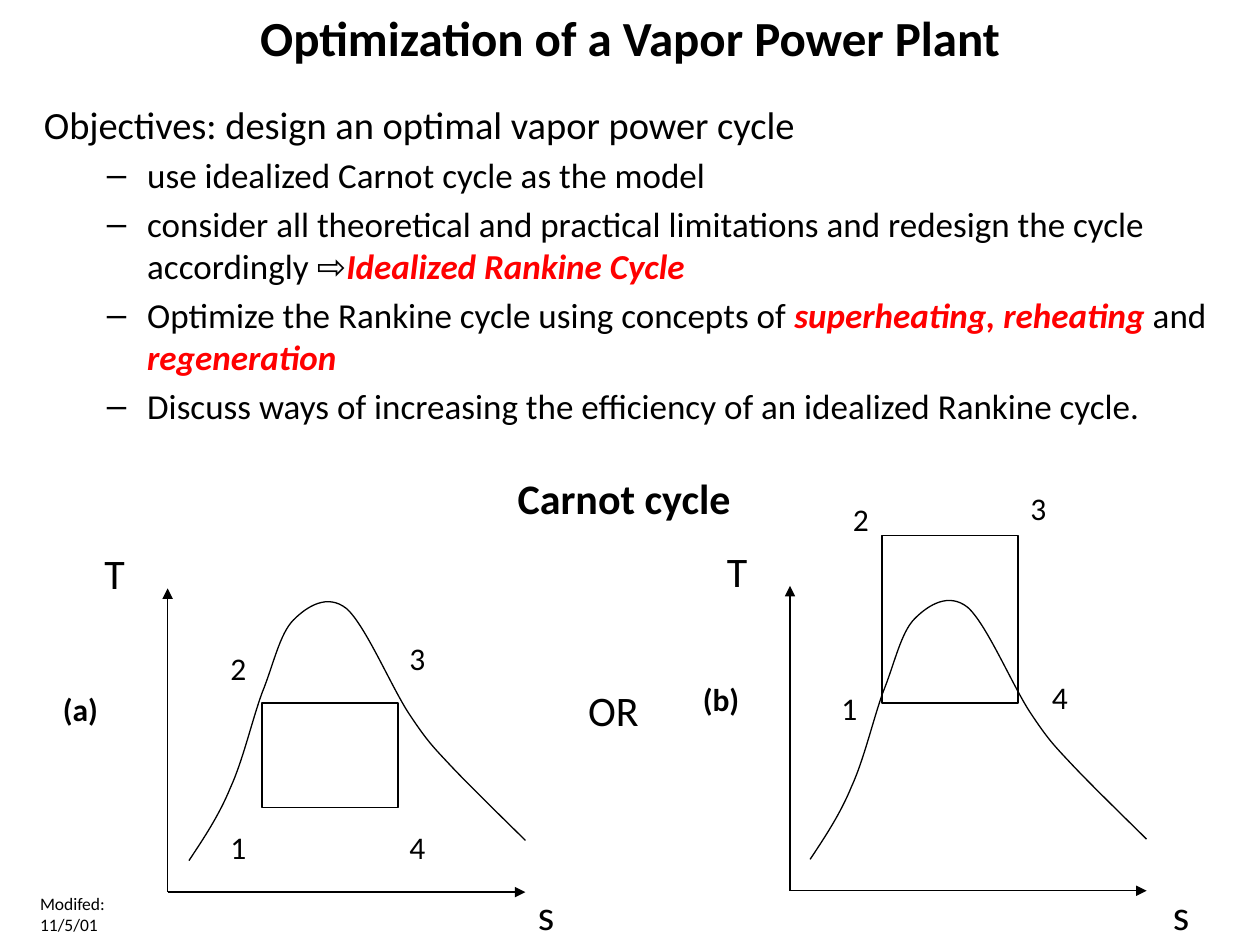
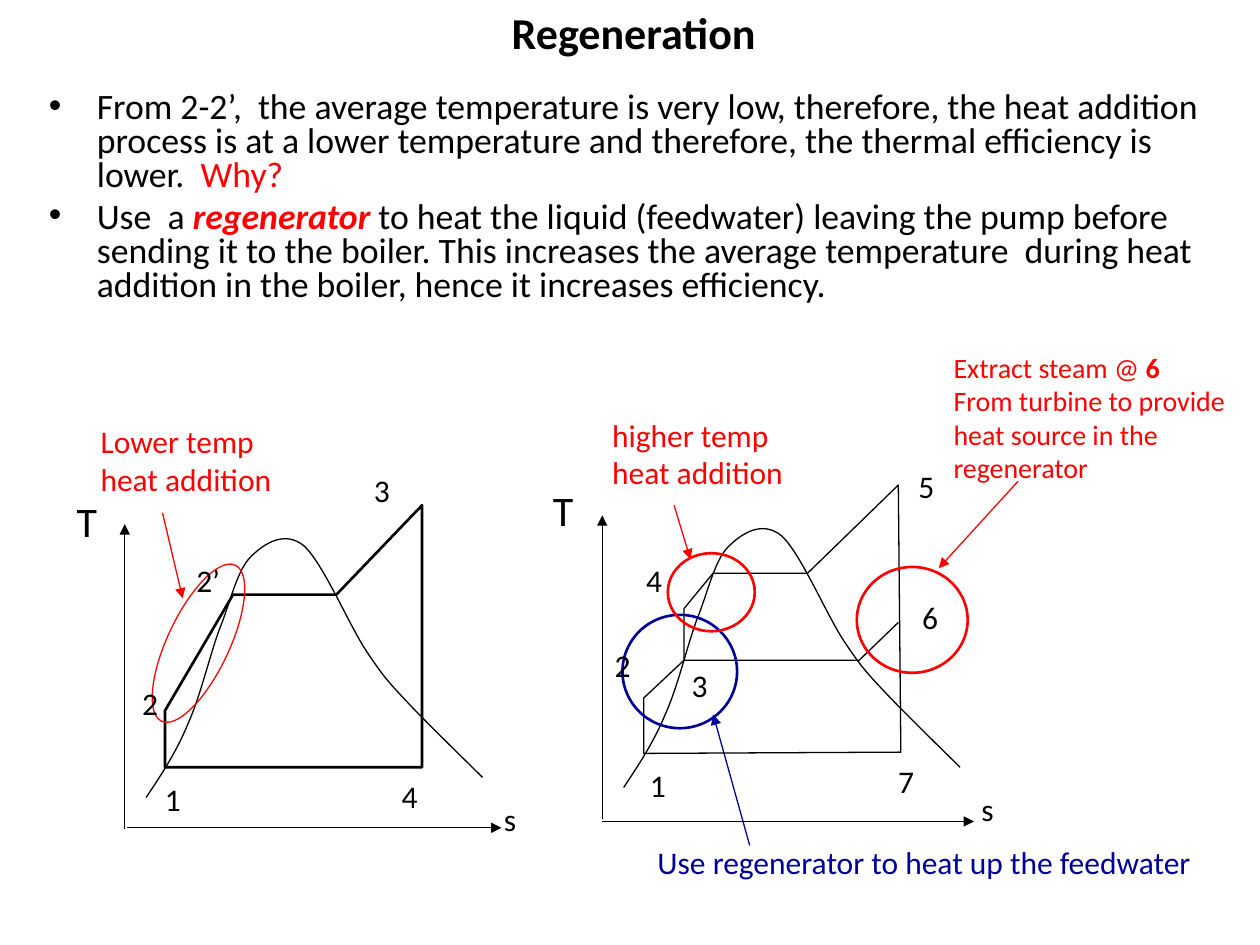
from lxml import etree
from pptx import Presentation
from pptx.dml.color import RGBColor
from pptx.enum.shapes import MSO_CONNECTOR, MSO_SHAPE
from pptx.enum.text import MSO_ANCHOR, MSO_AUTO_SIZE, PP_ALIGN
from pptx.oxml.ns import qn
from pptx.util import Inches, Pt

STRAIGHT = MSO_CONNECTOR.STRAIGHT
RECTANGLE, OVAL = MSO_SHAPE.RECTANGLE, MSO_SHAPE.OVAL
FONT = "Calibri"
BLACK, RED, BLUE = "000000", "FF0000", "000099"
THIN, THICK = 0.75, 1.5
TITLE_ONLY = 5
LINE_HEIGHT = {18: 0.33, 24: 0.4}

# Vapor dome: Bezier control points relative to its lower left end.
DOME = [
    (0, 0), (0.12, -0.18), (0.24, -0.36), (0.33, -0.58),
    (0.43, -0.8), (0.5, -1.11), (0.58, -1.33),
    (0.67, -1.55), (0.72, -1.8), (0.83, -1.91),
    (0.94, -2.02), (1.1, -2.12), (1.25, -2),
    (1.4, -1.87), (1.61, -1.37), (1.75, -1.16),
    (1.89, -0.95), (1.93, -0.91), (2.08, -0.75),
    (2.24, -0.58), (2.57, -0.26), (2.67, -0.16),
]


def add_runs(paragraph, runs, size):
    """Add (text, colour, style) runs; style may hold b for bold and i for italic."""
    for text, color, style in runs:
        run = paragraph.add_run()
        run.text = text
        run.font.name = FONT
        run.font.size = Pt(size)
        run.font.bold = "b" in style
        run.font.italic = "i" in style
        run.font.color.rgb = RGBColor.from_string(color)


def draw_line(shape, color, width):
    """Give a shape or connector a plain line without a shadow."""
    shape.line.color.rgb = RGBColor.from_string(color)
    shape.line.width = Pt(width)
    etree.SubElement(shape._element.spPr, qn("a:effectLst"))


# Body paragraphs: left margin, hanging indent, bullet, size, runs.
carnot = {
    "title": ("Optimization of a Vapor Power Plant", 0.75, 0.58, 28),
    "body_box": (0.25, 0.75, 9.5, 2.83),
    "line_spacing": 1.0,
    "body": [
        (0.38, 0.38, None, 22, [("Objectives: design an optimal vapor power cycle", BLACK, "")]),
        (0.82, 0.32, "–", 20, [("use idealized Carnot cycle as the model", BLACK, "")]),
        (0.82, 0.32, "–", 20, [
            ("consider all theoretical and practical limitations and redesign "
             "the cycle accordingly ⇨", BLACK, ""),
            ("Idealized Rankine Cycle", RED, "bi")]),
        (0.82, 0.32, "–", 20, [
            ("Optimize the Rankine cycle using concepts of ", BLACK, ""),
            ("superheating, reheating", RED, "bi"),
            (" and ", BLACK, ""),
            ("regeneration", RED, "bi")]),
        (0.82, 0.32, "–", 20, [
            ("Discuss ways of increasing the efficiency of an idealized Rankine cycle.",
             BLACK, "")]),
    ],
    # Labels: left, top, width, size, colour, style, lines.
    "labels": [
        (4.01, 3.7, 2.01, 24, BLACK, "b", ["Carnot cycle"]),
        (4.57, 5.38, 0.66, 24, BLACK, "", ["OR"]),
        (0.4, 5.43, 0.52, 18, BLACK, "b", ["(a)"]),
        (5.48, 5.35, 0.54, 18, BLACK, "b", ["(b)"]),
        (0.73, 4.3, 0.4, 24, BLACK, "", ["T"]),
        (5.67, 4.28, 0.4, 24, BLACK, "", ["T"]),
        (4.17, 7, 0.33, 24, BLACK, "", ["s"]),
        (9.21, 7, 0.33, 24, BLACK, "", ["s"]),
    ],
    "states": [
        ("1", 1.73, 6.52), ("2", 1.73, 5.1), ("3", 3.15, 5.02), ("4", 3.15, 6.52),
        ("1", 6.58, 5.42), ("2", 6.67, 3.92), ("3", 8.08, 3.83), ("4", 8.25, 5.33),
    ],
    "note_box": (0.22, 7.04, 0.8, 0.27),
    "note_size": 10,
    "note": [[("Modifed: 11/5/01", BLACK, "")]],
    "arrows": [
        (1.33, 7.08, 1.33, 4.67, BLACK), (1.33, 7.08, 4.17, 7.08, BLACK),
        (6.27, 7.07, 6.27, 4.65, BLACK), (6.27, 7.07, 9.1, 7.07, BLACK),
    ],
    "domes": [(1.5, 6.83), (6.43, 6.82)],
    "cycles": [],
    # Frames: kind, left, top, width, height, rotation, colour, line width.
    "frames": [
        (RECTANGLE, 2.08, 5.58, 1.08, 0.83, 0, BLACK, THIN),
        (RECTANGLE, 7, 4.25, 1.08, 1.33, 0, BLACK, THIN),
    ],
}

regeneration = {
    "title": ("Regeneration", 0.78, 0.51, 25.2),
    "body_box": (0.29, 0.68, 9.52, 1.88),
    "line_spacing": 0.8,
    "body": [
        (0.38, 0.38, "•", 20.4, [
            ("From 2-2’,  the average temperature is very low, therefore, the heat "
             "addition process is at a lower temperature and therefore, the thermal "
             "efficiency is lower.  ", BLACK, ""),
            ("Why?", RED, "")]),
        (0.38, 0.38, "•", 20.4, [
            ("Use  a ", BLACK, ""),
            ("regenerator", RED, "bi"),
            (" to heat the liquid (feedwater) leaving the pump before sending it to "
             "the boiler. This increases the average temperature  during heat addition "
             "in the boiler, hence it increases efficiency.", BLACK, "")]),
    ],
    "labels": [
        (0.51, 3.88, 0.4, 24, BLACK, "", ["T"]),
        (4.29, 3.8, 0.4, 24, BLACK, "", ["T"]),
        (3.9, 6.3, 0.31, 18, BLACK, "", ["s"]),
        (7.69, 6.22, 0.31, 18, BLACK, "", ["s"]),
        (0.7, 3.3, 1.64, 18, RED, "", ["Lower temp", "heat addition"]),
        (4.76, 3.25, 1.64, 18, RED, "", ["higher temp", "heat addition"]),
        (5.12, 6.64, 4.7, 18, BLUE, "", ["Use regenerator to heat up the feedwater"]),
    ],
    "states": [
        ("1", 1.21, 6.14), ("2", 1.03, 5.38), ("2’", 1.46, 4.4), ("3", 2.87, 3.69),
        ("4", 3.09, 6.12),
        ("1", 5.06, 6.03), ("2", 4.78, 5.08), ("3", 5.39, 5.24), ("4", 5.03, 4.4),
        ("5", 7.19, 3.66), ("6", 7.22, 4.7), ("7", 7.03, 6),
    ],
    "note_box": (7.47, 2.73, 2.53, 1.17),
    "note_size": 16,
    "note": [
        [("Extract steam @ ", RED, ""), ("6", RED, "b")],
        [("From turbine to provide", RED, "")],
        [("heat source in the", RED, "")],
        [("regenerator", RED, "")],
    ],
    "arrows": [
        (0.99, 6.58, 0.99, 4.16, BLACK), (1.01, 6.57, 3.98, 6.57, BLACK),
        (4.78, 6.5, 4.78, 4.09, BLACK), (4.78, 6.52, 7.73, 6.52, BLACK),
        (1.29, 4.07, 1.45, 4.75, RED), (5.35, 4.01, 5.48, 4.44, RED),
        (8.08, 3.82, 7.45, 4.51, RED), (5.95, 6.71, 5.66, 5.67, BLUE),
    ],
    "domes": [(1.16, 6.33), (4.95, 6.25)],
    # Cycles: points, closed, line width.
    "cycles": [
        ([(1.31, 6.09), (1.31, 5.64), (1.85, 4.72), (2.67, 4.72), (3.35, 4.01),
          (3.35, 6.09)], True, THICK),
        ([(5.11, 5.98), (5.11, 5.54), (5.43, 5.24), (5.43, 4.83), (5.66, 4.55),
          (6.41, 4.55), (7.13, 3.85), (7.15, 5.97)], True, THIN),
        ([(5.43, 5.24), (6.82, 5.24), (7.13, 4.94)], False, THIN),
    ],
    "frames": [
        (OVAL, 1.33, 4.42, 0.49, 1.37, 25.3, RED, THIN),
        (OVAL, 4.94, 4.88, 0.91, 0.9, 0, BLUE, THICK),
        (OVAL, 5.3, 4.39, 0.69, 0.62, 0, RED, THICK),
        (OVAL, 6.8, 4.5, 0.88, 0.84, 0, RED, THICK),
    ],
}

presentation = Presentation()
presentation.slide_width = Inches(10)
presentation.slide_height = Inches(7.5)

for content in (carnot, regeneration):
    slide = presentation.slides.add_slide(presentation.slide_layouts[TITLE_ONLY])
    shapes = slide.shapes

    text, left, height, size = content["title"]
    title = shapes.title
    title.left, title.top = Inches(left), Inches(0)
    title.width, title.height = Inches(8.5), Inches(height)
    title.text_frame.auto_size = MSO_AUTO_SIZE.NONE
    title.text_frame.vertical_anchor = MSO_ANCHOR.MIDDLE
    title.text_frame.paragraphs[0].alignment = PP_ALIGN.CENTER
    add_runs(title.text_frame.paragraphs[0], [(text, BLACK, "b")], size)

    body = shapes.add_textbox(*map(Inches, content["body_box"])).text_frame
    body.word_wrap = True
    for index, (margin, hanging, bullet, size, runs) in enumerate(content["body"]):
        paragraph = body.add_paragraph() if index else body.paragraphs[0]
        paragraph.line_spacing = content["line_spacing"]
        properties = paragraph._p.get_or_add_pPr()
        properties.set("marL", str(Inches(margin)))
        properties.set("indent", str(-Inches(hanging)))
        space_before = etree.SubElement(properties, qn("a:spcBef"))
        etree.SubElement(space_before, qn("a:spcPct"), val="20000")
        if bullet:
            etree.SubElement(properties, qn("a:buFont"), typeface="Arial")
            etree.SubElement(properties, qn("a:buChar"), char=bullet)
        add_runs(paragraph, runs, size)

    for x1, y1, x2, y2, color in content["arrows"]:
        arrow = shapes.add_connector(STRAIGHT, *map(Inches, (x1, y1, x2, y2)))
        draw_line(arrow, color, THIN)
        etree.SubElement(arrow._element.spPr.find(qn("a:ln")), qn("a:tailEnd"), type="triangle")

    domes = [([(left + x, top + y) for x, y in DOME], False, THIN)
             for left, top in content["domes"]]
    for outline_number, (points, closed, width) in enumerate(domes + content["cycles"]):
        corners = [(Inches(x), Inches(y)) for x, y in points]
        builder = shapes.build_freeform(*corners[0])
        builder.add_line_segments(corners[1:], close=closed)
        outline = builder.convert_to_shape()
        outline.fill.background()
        draw_line(outline, BLACK, width)
        if outline_number < len(domes):
            # Each three line segments hold the control points of one curve.
            curve_path = next(outline._element.iter(qn("a:path")))
            segments = curve_path.findall(qn("a:lnTo"))
            for start in range(0, len(segments), 3):
                curve = etree.SubElement(curve_path, qn("a:cubicBezTo"))
                for segment in segments[start:start + 3]:
                    curve.append(segment[0])
                    curve_path.remove(segment)

    for kind, left, top, width, height, rotation, color, line_width in content["frames"]:
        frame = shapes.add_shape(kind, *map(Inches, (left, top, width, height)))
        frame.rotation = rotation
        frame.fill.background()
        draw_line(frame, color, line_width)

    states = [(left, top, 0.25 + 0.09 * len(text), 18, BLACK, "", [text])
              for text, left, top in content["states"]]
    for left, top, width, size, color, style, lines in content["labels"] + states:
        height = 0.1 + len(lines) * LINE_HEIGHT[size]
        label = shapes.add_textbox(*map(Inches, (left, top, width, height))).text_frame
        label.word_wrap = False
        for index, line in enumerate(lines):
            paragraph = label.add_paragraph() if index else label.paragraphs[0]
            add_runs(paragraph, [(line, color, style)], size)

    note = shapes.add_textbox(*map(Inches, content["note_box"])).text_frame
    note.word_wrap = True
    for index, runs in enumerate(content["note"]):
        paragraph = note.add_paragraph() if index else note.paragraphs[0]
        add_runs(paragraph, runs, content["note_size"])

presentation.save("out.pptx")
